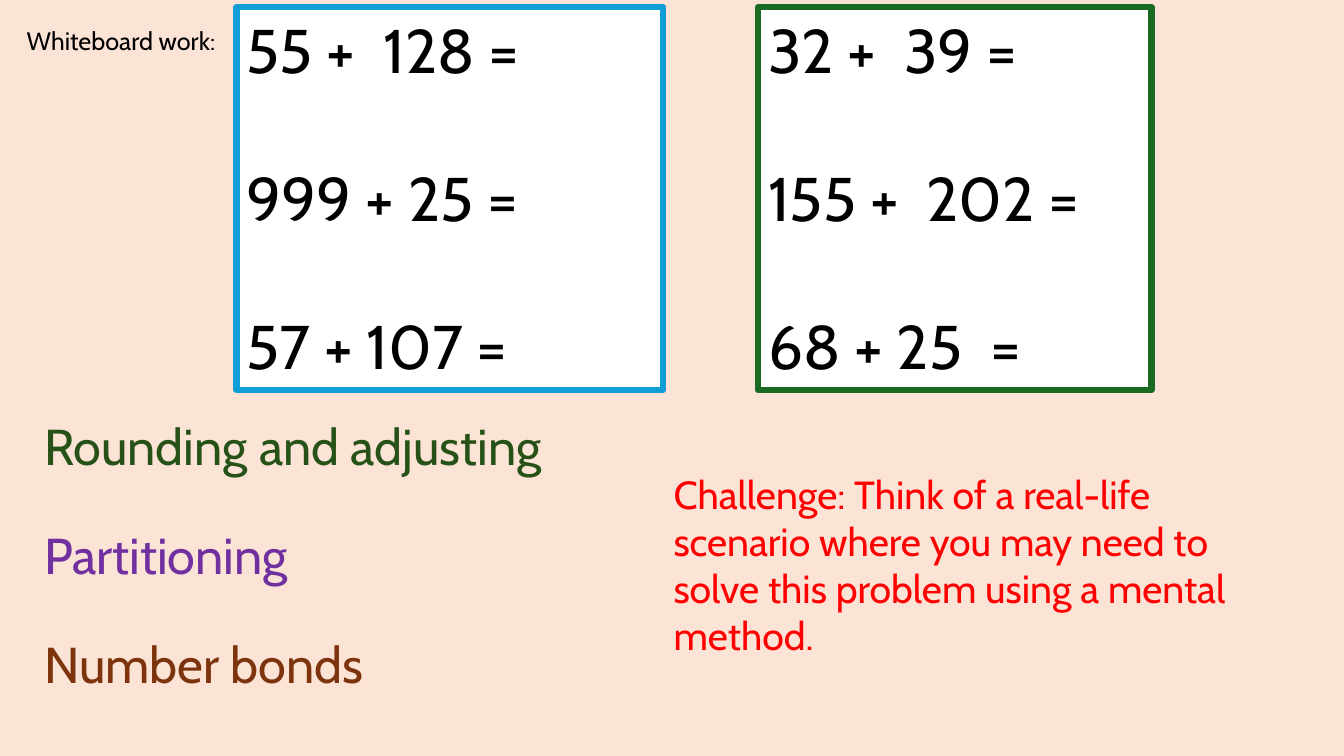
from pptx import Presentation
from pptx.dml.color import RGBColor
from pptx.enum.shapes import MSO_SHAPE
from pptx.enum.text import MSO_ANCHOR, PP_ALIGN
from pptx.util import Pt

RECTANGLE = MSO_SHAPE.RECTANGLE
TOP = MSO_ANCHOR.TOP
LEFT = PP_ALIGN.LEFT

PEACH = RGBColor(0xFB, 0xE3, 0xD6)
WHITE = RGBColor(0xFF, 0xFF, 0xFF)
BLACK = RGBColor(0, 0, 0)
BLUE = RGBColor(0x0F, 0x9E, 0xD5)
GREEN = RGBColor(0x19, 0x6B, 0x24)
DARK_GREEN = RGBColor(0x26, 0x52, 0x17)
PURPLE = RGBColor(0x70, 0x30, 0xA0)
BROWN = RGBColor(0x7D, 0x34, 0x0D)
RED = RGBColor(0xFF, 0, 0)

FONT = "Cabin"


def write_lines(tf, lines, size, gap=0, line_spacing=1.0):
    """Fill a text frame with one paragraph per (text, colour) pair."""
    tf.word_wrap = True
    tf.vertical_anchor = TOP
    for i, (text, color) in enumerate(lines):
        p = tf.paragraphs[0] if i == 0 else tf.add_paragraph()
        layout = {"alignment": LEFT, "line_spacing": line_spacing,
                  "space_before": Pt(gap if i else 0)}
        for name, value in layout.items():
            setattr(p, name, value)
        r = p.add_run()
        r.text = text
        for name, value in {"name": FONT, "size": Pt(size)}.items():
            setattr(r.font, name, value)
        r.font.color.rgb = color


def add_sums(s, box, border, sums):
    """Framed white panel with a column of sums."""
    sp = s.shapes.add_shape(RECTANGLE, *map(Pt, box))
    sp.shadow.inherit = False
    sp.fill.solid()
    sp.fill.fore_color.rgb = WHITE
    sp.line.color.rgb = border
    sp.line.width = Pt(4.5)
    write_lines(sp.text_frame, [(text, BLACK) for text in sums], 44, gap=53)


def add_text(s, box, lines, size, **spacing):
    """Plain text box."""
    sp = s.shapes.add_textbox(*map(Pt, box))
    write_lines(sp.text_frame, lines, size, **spacing)


def main():
    prs = Presentation()
    prs.slide_width, prs.slide_height = Pt(960), Pt(540)
    s = prs.slides.add_slide(prs.slide_layouts[6])
    s.background.fill.solid()
    s.background.fill.fore_color.rgb = PEACH

    # Sums to solve
    add_sums(s, (169, 5, 304.5, 273.6), BLUE,
             ["55 +  128 =", "999 + 25 =", "57 + 107 ="])
    add_sums(s, (541.5, 5, 281, 273.6), GREEN,
             ["32 +  39 =", "155 +  202 =", "68 + 25  ="])

    # Mental strategies
    add_text(s, (24.5, 298, 403, 200),
             [("Rounding and adjusting", DARK_GREEN),
              ("Partitioning", PURPLE),
              ("Number bonds", BROWN)],
             36, gap=39, line_spacing=0.9)

    # Challenge
    add_text(s, (474, 332.5, 450, 143),
             [("Challenge: Think of a real-life scenario where you may need "
               "to solve this problem using a mental method.", RED)], 28)

    # Heading
    add_text(s, (12, 14.5, 150, 51), [("Whiteboard work:", BLACK)], 18)

    prs.save("out.pptx")


if __name__ == "__main__":
    main()
